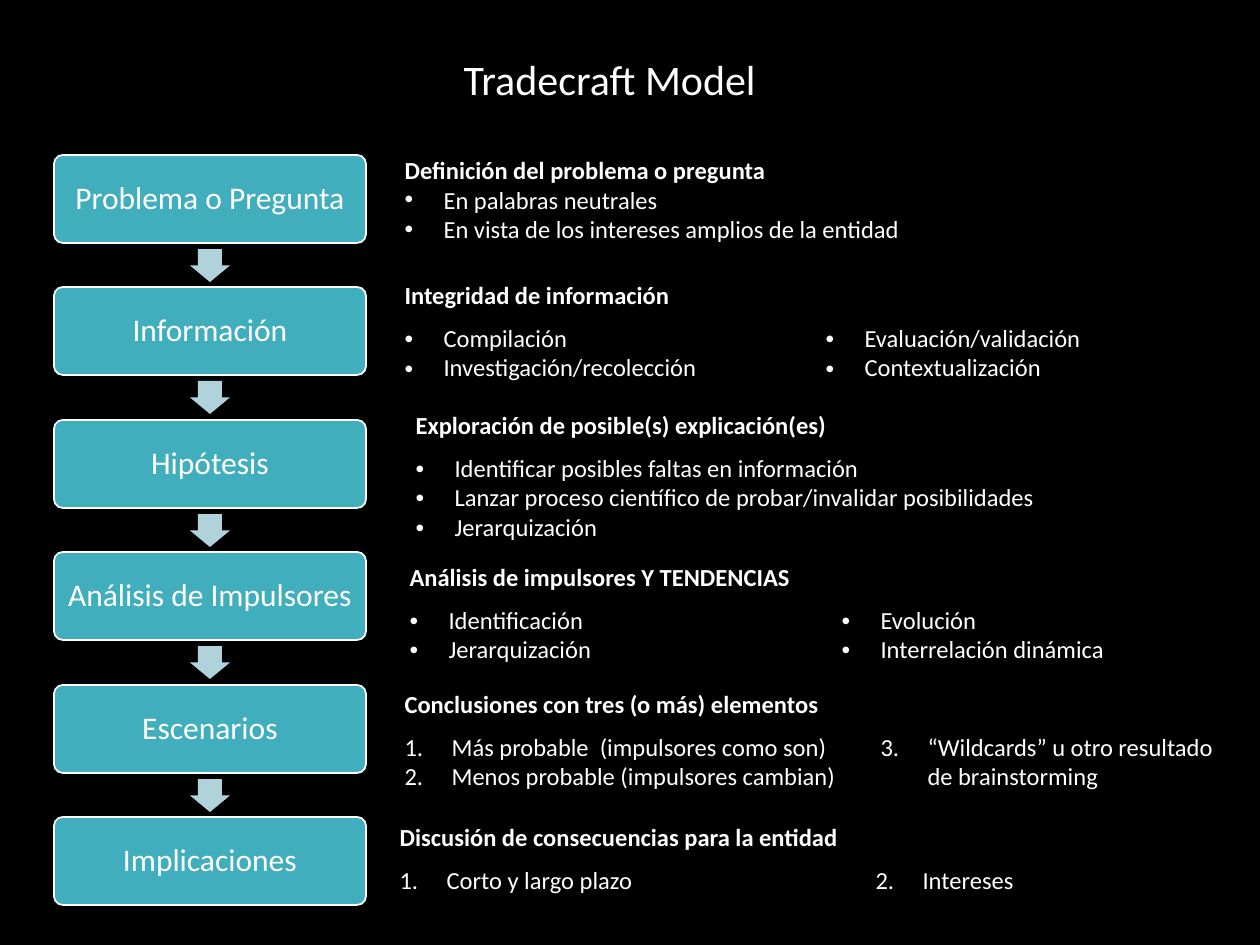
"""Build the Tradecraft Model slide: a six-step flow beside its notes."""
from lxml.etree import SubElement
from pptx import Presentation
from pptx.dml.color import RGBColor
from pptx.enum.shapes import MSO_SHAPE
from pptx.enum.text import MSO_ANCHOR, MSO_AUTO_SIZE, PP_ALIGN
from pptx.oxml.ns import qn
from pptx.util import Pt

BLACK = RGBColor(0x00, 0x00, 0x00)
WHITE = RGBColor(0xFF, 0xFF, 0xFF)
TEAL = RGBColor(0x41, 0xAE, 0xBD)
PALE = RGBColor(0xB0, 0xD3, 0xDB)
PLAIN = "{2D5ABB26-0587-4C30-8999-92F81FD0307C}"

TITLE = "Tradecraft Model"
STEPS = ["Problema o Pregunta", "Información", "Hipótesis",
         "Análisis de Impulsores", "Escenarios", "Implicaciones"]
INTRO = ("Definición del problema o pregunta",
         ["En palabras neutrales",
          "En vista de los intereses amplios de la entidad"])
NOTES = [
    dict(head="Integridad de información", at=(392, 275), wide=(421, 419), num=False,
         lists=[["Compilación", "Investigación/recolección"],
                ["Evaluación/validación", "Contextualización"]]),
    dict(head="Exploración de posible(s) explicación(es)", at=(403, 405), wide=(840,),
         num=False,
         lists=[["Identificar posibles faltas en información",
                 "Lanzar proceso científico de probar/invalidar posibilidades",
                 "Jerarquización"]]),
    dict(head="Análisis de impulsores Y TENDENCIAS", at=(397, 557), wide=(432, 408),
         num=False,
         lists=[["Identificación", "Jerarquización"],
                ["Evolución", "Interrelación dinámica"]]),
    dict(head="Conclusiones con tres (o más) elementos", at=(392, 684), wide=(476, 374),
         num=True,
         lists=[["Más probable  (impulsores como son)",
                 "Menos probable (impulsores cambian)"],
                ["“Wildcards” u otro resultado de brainstorming"]]),
    dict(head="Discusión de consecuencias para la entidad", at=(387, 817), wide=(476, 374),
         num=True, lists=[["Corto y largo plazo"], ["Intereses"]]),
]

LEFT, TOP, WIDE, HIGH, SPAN = 54, 155, 312, 88, 662
ARROW_W, ARROW_H, GAP = 40, 33, 6
HEAD_H, LINE_H, PAD, MIN_H = 42, 29, 13, 51


def px(n):
    return round(n * 914400 / 126)


def place(shape, *box):
    for key, val in zip(("left", "top", "width", "height"), box):
        setattr(shape, key, px(val))


def write(para, text, size=14, bold=False):
    para.space_before = Pt(0)
    run = para.add_run()
    run.text = text
    look = dict(name="Calibri", size=Pt(size), bold=bold)
    for key, val in look.items():
        setattr(run.font, key, val)
    run.font.color.rgb = WHITE


def mark(para, num=False, start=1):
    props = para._p.get_or_add_pPr()
    dent = px(47 if num else 39)
    props.set("marL", str(dent))
    props.set("indent", str(-dent))
    if num:
        SubElement(props, qn("a:buFont"), typeface="+mj-lt")
        SubElement(props, qn("a:buAutoNum"), type="arabicPeriod", startAt=str(start))
    else:
        SubElement(props, qn("a:buFont"), typeface="Arial")
        SubElement(props, qn("a:buChar"), char="•")


def head(para, text):
    props = para._p.get_or_add_pPr()
    props.set("marL", "0")
    props.set("indent", "0")
    SubElement(props, qn("a:buNone"))
    write(para, text, bold=True)


def items(frame, texts, first, num=False, start=1):
    for i, text in enumerate(texts):
        para = frame.paragraphs[0] if first and i == 0 else frame.add_paragraph()
        mark(para, num, start)
        write(para, text)


def setup(frame, **look):
    for key, val in look.items():
        setattr(frame, key, val)


def add_shape(slide, kind, box, fill, adjs):
    shape = slide.shapes.add_shape(kind, *map(px, box))
    shape.shadow.inherit = False
    shape.fill.solid()
    shape.fill.fore_color.rgb = fill
    for i, val in enumerate(adjs):
        shape.adjustments[i] = val
    return shape


def add_flow(slide):
    for i, step in enumerate(STEPS):
        top = TOP + round(i * SPAN / (len(STEPS) - 1))
        box = add_shape(slide, MSO_SHAPE.ROUNDED_RECTANGLE,
                        (LEFT, top, WIDE, HIGH), TEAL, [0.1])
        box.line.color.rgb = WHITE
        box.line.width = Pt(1)
        side = px(11)
        setup(box.text_frame, word_wrap=True, vertical_anchor=MSO_ANCHOR.MIDDLE,
              margin_left=side, margin_right=side, margin_top=side, margin_bottom=side)
        para = box.text_frame.paragraphs[0]
        para.alignment = PP_ALIGN.CENTER
        para.line_spacing = 0.9
        write(para, step, 18)
        if i < len(STEPS) - 1:
            spot = (LEFT + (WIDE - ARROW_W) / 2, top + HIGH + GAP, ARROW_W, ARROW_H)
            arrow = add_shape(slide, MSO_SHAPE.DOWN_ARROW, spot, PALE, [0.6, 0.5])
            arrow.line.fill.background()


def add_note(slide, note):
    wide, lists = note["wide"], note["lists"]
    rows = (HEAD_H, max(MIN_H, LINE_H * max(map(len, lists)) + PAD))
    box = (*note["at"], sum(wide), sum(rows))
    table = slide.shapes.add_table(2, len(wide), *map(px, box)).table
    table.first_row = table.horz_banding = False
    table._tbl.tblPr.find(qn("a:tableStyleId")).text = PLAIN
    for col, val in zip(table.columns, wide):
        col.width = px(val)
    for row, val in zip(table.rows, rows):
        row.height = px(val)
    for cell in table.iter_cells():
        cell.fill.background()
    head(table.cell(0, 0).text_frame.paragraphs[0], note["head"])
    for c in range(1, len(wide)):
        blank = table.cell(0, c).text_frame.paragraphs[0]
        SubElement(blank._p, qn("a:endParaRPr"), sz="1400")
    start = 1
    for c, texts in enumerate(lists):
        items(table.cell(1, c).text_frame, texts, True, note["num"], start)
        start += len(texts)


def main():
    deck = Presentation()
    deck.slide_width, deck.slide_height = px(1260), px(945)
    slide = deck.slides.add_slide(deck.slide_layouts[1])
    slide.background.fill.solid()
    slide.background.fill.fore_color.rgb = BLACK

    title, body = slide.placeholders
    place(title, 451, 47, 321, 63)
    place(body, 392, 149, 798, 102)
    for shape, wrap in ((title, False), (body, True)):
        setup(shape.text_frame, word_wrap=wrap, auto_size=MSO_AUTO_SIZE.NONE,
              vertical_anchor=MSO_ANCHOR.TOP)
    name = title.text_frame.paragraphs[0]
    name.alignment = PP_ALIGN.LEFT
    write(name, TITLE, 24)
    head(body.text_frame.paragraphs[0], INTRO[0])
    items(body.text_frame, INTRO[1], False)

    add_flow(slide)
    for note in NOTES:
        add_note(slide, note)
    deck.save("out.pptx")


if __name__ == "__main__":
    main()
